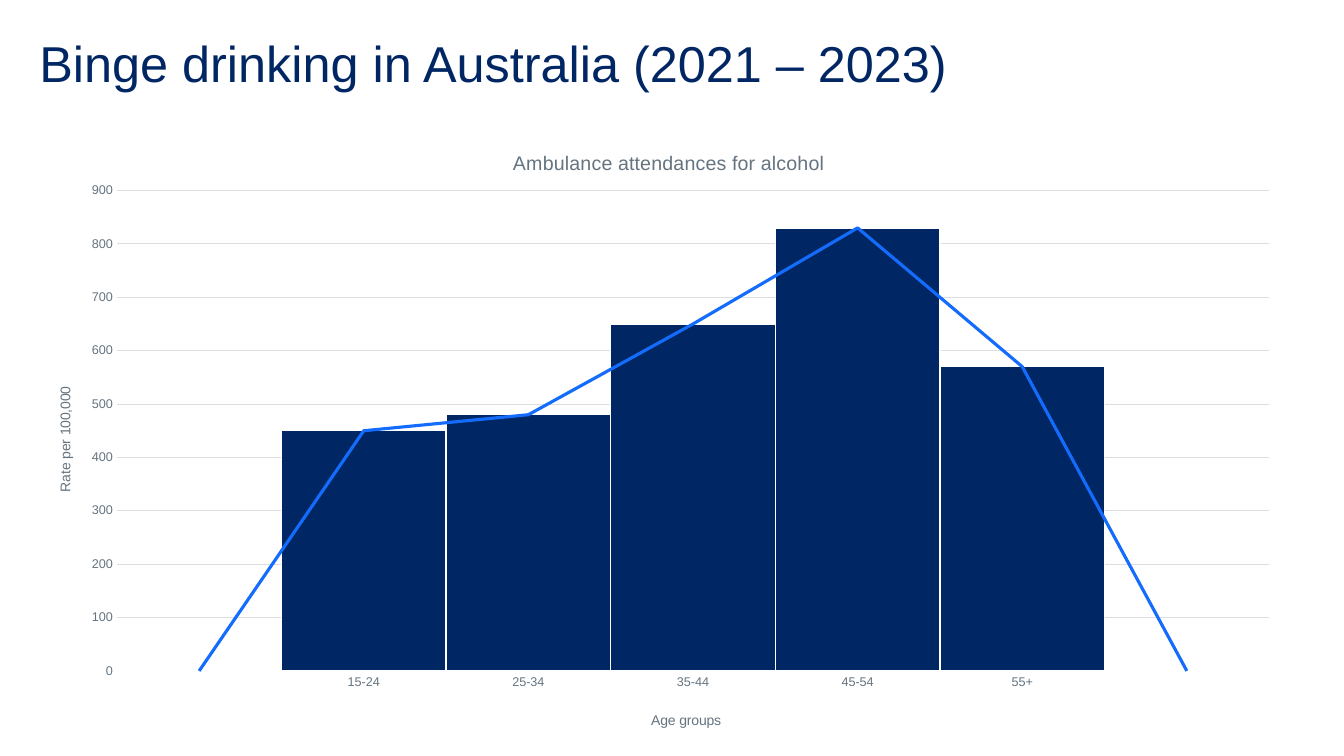
import copy

import lxml.etree
import pptx
import pptx.chart.data
import pptx.dml.color
import pptx.enum.chart
import pptx.oxml
import pptx.oxml.ns
import pptx.util

COLORS = {"navy": "002664", "blue": "146CFD", "grey": "657480",
          "grid": "DBDFE2", "white": "FFFFFF", "text": "22272B"}
COLORS = {name: pptx.dml.color.RGBColor.from_string(value) for name, value in COLORS.items()}
FONT = "Arial"
qn = pptx.oxml.ns.qn


def write(frame, text, size, color, spacing=None):
    paragraph = frame.paragraphs[0]
    paragraph.line_spacing = spacing
    run = paragraph.add_run()
    run.text = text
    run.font.name = FONT
    run.font.size = pptx.util.Pt(size)
    run.font.bold = False
    run.font.color.rgb = COLORS[color]


def place(parent, **shares):
    for old in parent.findall(qn("c:layout")):
        parent.remove(old)
    layout = lxml.etree.Element(qn("c:layout"))
    manual = lxml.etree.SubElement(layout, qn("c:manualLayout"))
    if "w" in shares:
        lxml.etree.SubElement(manual, qn("c:layoutTarget"), val="inner")
    for side in ("x", "y"):
        lxml.etree.SubElement(manual, qn(f"c:{side}Mode"), val="edge")
    for side, share in shares.items():
        lxml.etree.SubElement(manual, qn(f"c:{side}"), val=str(share))
    text = parent.find(qn("c:tx"))
    parent.insert(0 if text is None else 1, layout)


presentation = pptx.Presentation()
presentation.slide_width = pptx.util.Inches(13.33)
presentation.slide_height = pptx.util.Inches(7.5)
slide = presentation.slides.add_slide(presentation.slide_layouts[6])
margin = pptx.util.Inches(0.39)
content_width = pptx.util.Inches(12.56)

heading = slide.shapes.add_textbox(margin, margin, content_width, pptx.util.Inches(0.6)).text_frame
heading.word_wrap = True
heading.margin_left = heading.margin_right = heading.margin_top = heading.margin_bottom = 0
write(heading, "Binge drinking in Australia (2021 – 2023)", size=36, color="navy", spacing=0.9)

rates = [0, 450, 480, 650, 830, 570, 0]
data = pptx.chart.data.CategoryChartData()
data.categories = ["", "15-24", "25-34", "35-44", "45-54", "55+", ""]
for name in ("Series 1", "Series 2"):
    data.add_series(name, rates)
chart = slide.shapes.add_chart(
    pptx.enum.chart.XL_CHART_TYPE.COLUMN_CLUSTERED, pptx.util.Inches(0.28),
    pptx.util.Inches(1.21), content_width, pptx.util.Inches(6.19), data).chart
chart.has_legend = False
chart.font.name = FONT
chart.font.size = pptx.util.Pt(10)
chart.font.color.rgb = COLORS["text"]

columns = chart.plots[0]
columns.gap_width = 0
columns.vary_by_categories = False
plot_area = next(chart.element.iter(qn("c:plotArea")))
bar_chart = plot_area.find(qn("c:barChart"))
line_chart = pptx.oxml.parse_xml(
    f'<c:lineChart {pptx.oxml.ns.nsdecls("c")}>'
    '<c:grouping val="standard"/><c:varyColors val="0"/></c:lineChart>')
line_series = bar_chart.findall(qn("c:ser"))[1]
for bar_setting in line_series.findall(qn("c:invertIfNegative")):
    line_series.remove(bar_setting)
line_chart.append(line_series)
lxml.etree.SubElement(line_chart, qn("c:marker"), val="1")
for axis_id in bar_chart.findall(qn("c:axId")):
    line_chart.append(copy.deepcopy(axis_id))
bar_chart.addnext(line_chart)

bars = columns.series[0]
bars.format.fill.solid()
bars.format.fill.fore_color.rgb = COLORS["navy"]
curve = chart.plots[1].series[0]
curve.smooth = False
curve.marker.style = pptx.enum.chart.XL_MARKER_STYLE.NONE
ages, scale = chart.category_axis, chart.value_axis
scale.minimum_scale, scale.maximum_scale, scale.major_unit = 0, 900, 100
scale.has_major_gridlines = True

for line, color, width in (
        (bars.format.line, "white", 1), (curve.format.line, "blue", 2.25),
        (ages.format.line, "grid", 0.75), (scale.major_gridlines.format.line, "grid", 0.75)):
    line.color.rgb = COLORS[color]
    line.width = pptx.util.Pt(width)
scale.format.line.fill.background()

for axis in (ages, scale):
    axis.major_tick_mark = axis.minor_tick_mark = pptx.enum.chart.XL_TICK_MARK.NONE
    axis.tick_labels.font.name = FONT
    axis.tick_labels.font.size = pptx.util.Pt(9)
    axis.tick_labels.font.color.rgb = COLORS["grey"]

for owner, text, size, x, y in (
        (chart, "Ambulance attendances for alcohol", 14, 0.38, 0.04),
        (ages, "Age groups", 10, 0.49, 0.94),
        (scale, "Rate per 100,000", 10, 0.02, 0.42)):
    owner.has_title = True
    title = owner.chart_title if owner is chart else owner.axis_title
    write(title.text_frame, text, size=size, color="grey")
    place(title.element, x=x, y=y)
next(scale.axis_title.element.iter(qn("a:bodyPr"))).set("rot", "-5400000")
place(plot_area, x=0.07, y=0.11, w=0.91, h=0.77)

presentation.save("out.pptx")
